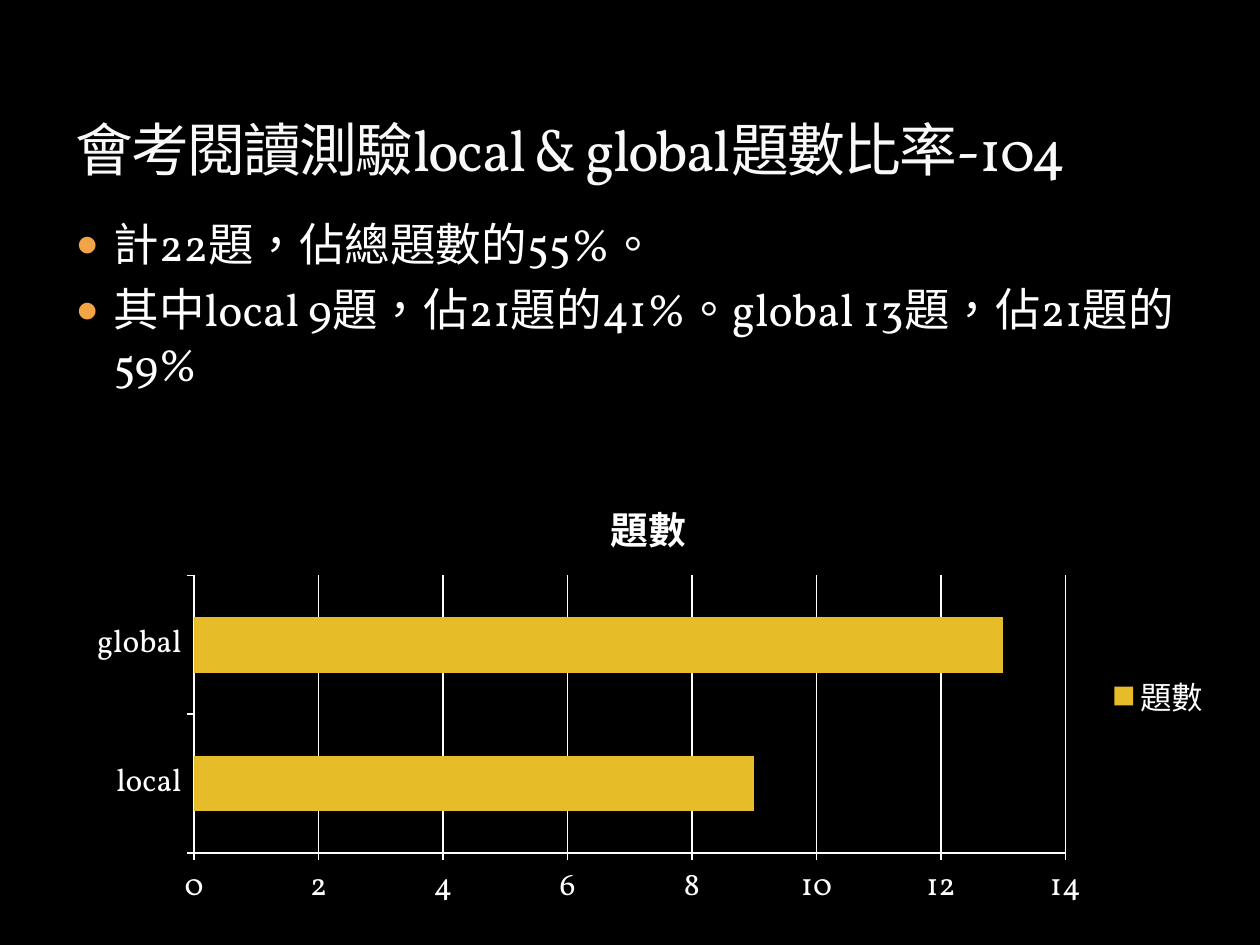
"""Build a slide on the share of local and global reading questions."""
from dataclasses import dataclass

from lxml import etree
from pptx import Presentation
from pptx.chart.data import CategoryChartData
from pptx.dml.color import RGBColor
from pptx.enum.chart import XL_CHART_TYPE, XL_LEGEND_POSITION, XL_TICK_MARK
from pptx.enum.lang import MSO_LANGUAGE_ID
from pptx.enum.text import MSO_ANCHOR, MSO_AUTO_SIZE, PP_ALIGN
from pptx.oxml.ns import qn
from pptx.util import Emu, Pt

BAR = XL_CHART_TYPE.BAR_CLUSTERED
LEGEND_RIGHT = XL_LEGEND_POSITION.RIGHT
TICK_OUTSIDE = XL_TICK_MARK.OUTSIDE
TICK_NONE = XL_TICK_MARK.NONE
CHINESE = MSO_LANGUAGE_ID.TRADITIONAL_CHINESE
BOTTOM, TOP = MSO_ANCHOR.BOTTOM, MSO_ANCHOR.TOP
LEFT = PP_ALIGN.LEFT
NO_AUTOFIT = MSO_AUTO_SIZE.NONE
EMU_PER_PX = 914400 / 126


@dataclass(frozen=True)
class Theme:
    font: str = "Vollkorn"
    background: str = "000000"
    title: str = "F9F9F9"
    text: str = "FFFFFF"
    bullet: str = "F3A447"
    bar: str = "E7BC29"
    title_size: float = 33
    body_size: float = 26
    chart_size: float = 18
    chart_title_size: float = 21.6


def px(length):
    return Emu(round(length * EMU_PER_PX))


def rgb(color):
    return RGBColor.from_string(color)


class SlideBuilder:
    def __init__(self, slide, theme):
        self.slide = slide
        self.theme = theme
        fill = slide.background.fill
        fill.solid()
        fill.fore_color.rgb = rgb(theme.background)

    def style_font(self, font, size, color):
        font.name = self.theme.font
        font.size = Pt(size)
        font.color.rgb = rgb(color)

    def place(self, shape, box, anchor):
        shape.left, shape.top, shape.width, shape.height = map(px, box)
        frame = shape.text_frame
        frame.word_wrap = True
        frame.auto_size = NO_AUTOFIT
        frame.vertical_anchor = anchor
        return frame

    def style_runs(self, paragraph, size, color):
        paragraph.alignment = LEFT
        for run in paragraph.runs:
            self.style_font(run.font, size, color)
            run.font.language_id = CHINESE

    def title(self, text, box):
        frame = self.place(self.slide.shapes.title, box, BOTTOM)
        frame.text = text
        paragraph = frame.paragraphs[0]
        self.style_runs(paragraph, self.theme.title_size, self.theme.title)
        for run in paragraph.runs:
            run.font._element.set("spc", "-100")

    def bullets(self, items, box, indent):
        frame = self.place(self.slide.placeholders[1], box, TOP)
        frame.text = "\n".join(items)
        for paragraph in frame.paragraphs:
            self.style_runs(paragraph, self.theme.body_size, self.theme.text)
            paragraph.space_before = Pt(6)
            properties = paragraph._p.get_or_add_pPr()
            properties.set("marL", str(px(indent)))
            properties.set("indent", str(-px(indent)))
            color = etree.SubElement(properties, qn("a:buClr"))
            etree.SubElement(color, qn("a:srgbClr"), val=self.theme.bullet)
            etree.SubElement(properties, qn("a:buSzPct"), val="85000")
            etree.SubElement(properties, qn("a:buChar"), char="●")

    def style_line(self, line):
        line.color.rgb = rgb(self.theme.text)
        line.width = Pt(0.75)

    def bar_chart(self, name, values, box):
        theme = self.theme
        data = CategoryChartData()
        data.categories = list(values)
        data.add_series(name, list(values.values()))
        chart = self.slide.shapes.add_chart(BAR, *map(px, box), data).chart
        self.style_font(chart.font, theme.chart_size, theme.text)

        chart.has_title = True
        title = chart.chart_title.text_frame
        title.text = name
        for run in title.paragraphs[0].runs:
            self.style_font(run.font, theme.chart_title_size, theme.text)
            run.font.bold = True

        chart.has_legend = True
        chart.legend.position = LEGEND_RIGHT
        chart.legend.include_in_layout = False

        for axis in (chart.category_axis, chart.value_axis):
            axis.major_tick_mark = TICK_OUTSIDE
            axis.minor_tick_mark = TICK_NONE
            self.style_line(axis.format.line)
        chart.category_axis.has_major_gridlines = False
        value_axis = chart.value_axis
        value_axis.minimum_scale, value_axis.maximum_scale = 0, 14
        value_axis.major_unit = 2
        value_axis.has_major_gridlines = True
        self.style_line(value_axis.major_gridlines.format.line)

        plot = chart.plots[0]
        plot.gap_width = 150
        plot.vary_by_categories = False
        fill = plot.series[0].format.fill
        fill.solid()
        fill.fore_color.rgb = rgb(theme.bar)


def main():
    presentation = Presentation()
    presentation.slide_width, presentation.slide_height = px(1260), px(945)
    slide = presentation.slides.add_slide(presentation.slide_layouts[1])
    builder = SlideBuilder(slide, Theme())
    builder.title("會考閱讀測驗local & global題數比率-104", (63, 21, 1134, 168))
    builder.bullets(
        [
            "計22題，佔總題數的55%。",
            "其中local 9題，佔21題的41%。global 13題，佔21題的59%",
        ],
        (63, 210, 1134, 630),
        indent=38,
    )
    builder.bar_chart("題數", {"local": 9, "global": 13}, (74, 473, 1150, 446))
    presentation.save("out.pptx")


if __name__ == "__main__":
    main()
